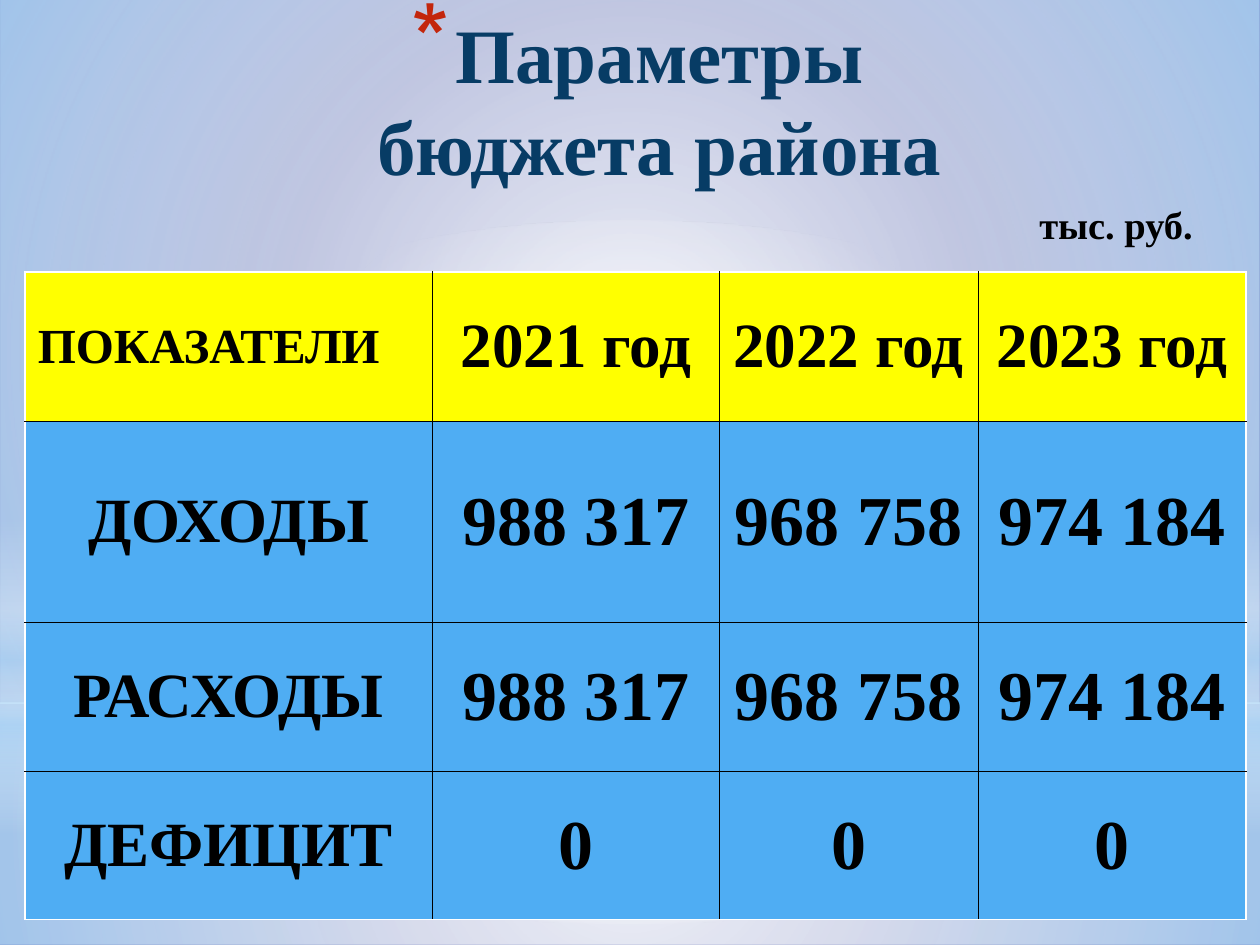
from dataclasses import dataclass

from lxml.etree import SubElement
from pptx import Presentation
from pptx.dml.color import RGBColor
from pptx.enum.shapes import MSO_SHAPE
from pptx.enum.text import MSO_ANCHOR, PP_ALIGN
from pptx.oxml import parse_xml
from pptx.oxml.ns import nsdecls, qn
from pptx.util import Inches, Pt

COLORS = {
    "base": "5968B0", "white": "FFFFFF", "sky": "B4DCFA", "black": "000000",
    "title": "073C65", "bullet": "C3260C", "header": "FFFF00", "body": "4FADF3",
}
BOLD_SERIF = {"name": "Times New Roman", "bold": True}
CIRCLE = ('<a:path path="circle"><a:fillToRect l="50000" t="50000" '
          'r="50000" b="50000"/></a:path>')
VERTICAL = '<a:lin ang="5400000" scaled="0"/>'


@dataclass(frozen=True)
class Glow:
    """A background layer; each stop is (position %, colour, opacity %)."""
    preset: MSO_SHAPE
    top: float
    height: float
    direction: str
    stops: tuple


GLOWS = (
    Glow(MSO_SHAPE.RECTANGLE, 5.58, 1.92, CIRCLE,
         ((0, "white", 91), (37, "white", 76), (100, "sky", 79))),
    Glow(MSO_SHAPE.RECTANGLE, 0, 5.58, CIRCLE,
         ((0, "white", 89), (48, "white", 62), (100, "sky", 79))),
    Glow(MSO_SHAPE.RECTANGLE, 4.12, 2.5, VERTICAL,
         ((0, "white", 0), (29, "white", 30), (45, "sky", 40),
          (55, "white", 26), (65, "sky", 60), (100, "white", 0))),
    Glow(MSO_SHAPE.OVAL, 1.75, 5.58, CIRCLE,
         ((0, "white", 100), (56, "white", 0))),
)

COLUMN_WIDTHS = (3.23, 2.28, 2.05, 2.13)
ROW_HEIGHTS = (1.18, 1.6, 1.18, 1.18)
BUDGET = (
    ("ПОКАЗАТЕЛИ", "2021 год", "2022 год", "2023 год"),
    ("ДОХОДЫ", "988 317", "968 758", "974 184"),
    ("РАСХОДЫ", "988 317", "968 758", "974 184"),
    ("ДЕФИЦИТ", "0", "0", "0"),
)


def rgb(color: str) -> RGBColor:
    return RGBColor.from_string(COLORS[color])


def format_font(font, size: float, color: str) -> None:
    for attribute, value in {**BOLD_SERIF, "size": Pt(size)}.items():
        setattr(font, attribute, value)
    font.color.rgb = rgb(color)


def add_glow(slide, glow: Glow) -> None:
    layer = slide.shapes.add_shape(
        glow.preset, 0, Inches(glow.top), Inches(10), Inches(glow.height))
    layer.shadow.inherit = False
    layer.line.fill.background()
    stops = "".join(
        f'<a:gs pos="{position * 1000}"><a:srgbClr val="{COLORS[color]}">'
        f'<a:alpha val="{opacity * 1000}"/></a:srgbClr></a:gs>'
        for position, color, opacity in glow.stops)
    gradient = parse_xml(
        f'<a:gradFill {nsdecls("a")} rotWithShape="1"><a:gsLst>{stops}</a:gsLst>'
        f'{glow.direction}</a:gradFill>')
    layer.element.spPr.find(qn("a:prstGeom")).addnext(gradient)


def add_title(slide) -> None:
    title = slide.shapes.title
    title.left, title.top = Inches(0.12), Inches(0)
    title.width, title.height = Inches(9.88), Inches(1.95)
    title.element.getparent().append(title.element)  # in front of the glows
    frame = title.text_frame
    frame.text = "Параметры\vбюджета района"
    frame.vertical_anchor = MSO_ANCHOR.TOP
    paragraph = frame.paragraphs[0]
    paragraph.alignment = PP_ALIGN.CENTER
    for run in paragraph.runs:
        format_font(run.font, 44, "title")
    properties = paragraph._p.get_or_add_pPr()
    properties.set("marL", str(Inches(0.35)))
    properties.set("indent", str(Inches(-0.35)))
    bullet_color = SubElement(properties, qn("a:buClr"))
    SubElement(bullet_color, qn("a:srgbClr"), val=COLORS["bullet"])
    SubElement(properties, qn("a:buSzPct"), val="128000")
    SubElement(properties, qn("a:buChar"), char="*")


def add_unit_note(slide) -> None:
    note = slide.shapes.add_textbox(
        Inches(8.15), Inches(1.55), Inches(1.56), Inches(0.47))
    note.text_frame.word_wrap = True
    note.text_frame.text = "тыс. руб."
    format_font(note.text_frame.paragraphs[0].runs[0].font, 22, "black")


def set_borders(cell, outer_sides: dict) -> None:
    """Draw outer sides in white and inner ones as black hairlines."""
    properties = cell._tc.get_or_add_tcPr()
    for order, (side, is_outer) in enumerate(outer_sides.items()):
        color, width = ("white", 1) if is_outer else ("black", 0.25)
        properties.insert(order, parse_xml(
            f'<a:{side} {nsdecls("a")} w="{Pt(width)}"><a:solidFill>'
            f'<a:srgbClr val="{COLORS[color]}"/></a:solidFill></a:{side}>'))


def label_size(row: int, column: int) -> int:
    if row and column:
        return 40
    return 36 if row or column else 28


def add_budget_table(slide) -> None:
    last_row, last_column = len(ROW_HEIGHTS) - 1, len(COLUMN_WIDTHS) - 1
    table = slide.shapes.add_table(
        len(ROW_HEIGHTS), len(COLUMN_WIDTHS), Inches(0.2), Inches(2.16),
        Inches(sum(COLUMN_WIDTHS)), Inches(sum(ROW_HEIGHTS))).table
    for column, width in zip(table.columns, COLUMN_WIDTHS):
        column.width = Inches(width)
    for row, height in zip(table.rows, ROW_HEIGHTS):
        row.height = Inches(height)
    for r, labels in enumerate(BUDGET):
        for c, label in enumerate(labels):
            cell = table.cell(r, c)
            cell.text = label
            cell.vertical_anchor = MSO_ANCHOR.MIDDLE
            cell.fill.solid()
            cell.fill.fore_color.rgb = rgb("body" if r else "header")
            paragraph = cell.text_frame.paragraphs[0]
            paragraph.alignment = PP_ALIGN.CENTER if r or c else PP_ALIGN.LEFT
            format_font(paragraph.runs[0].font, label_size(r, c), "black")
            set_borders(cell, {"lnL": c == 0, "lnR": c == last_column,
                               "lnT": r == 0, "lnB": r == last_row})


def main() -> None:
    presentation = Presentation()
    presentation.slide_width, presentation.slide_height = Inches(10), Inches(7.5)
    slide = presentation.slides.add_slide(presentation.slide_layouts[5])
    slide.background.fill.solid()
    slide.background.fill.fore_color.rgb = rgb("base")
    for glow in GLOWS:
        add_glow(slide, glow)
    add_title(slide)
    add_unit_note(slide)
    add_budget_table(slide)
    presentation.save("out.pptx")


if __name__ == "__main__":
    main()
